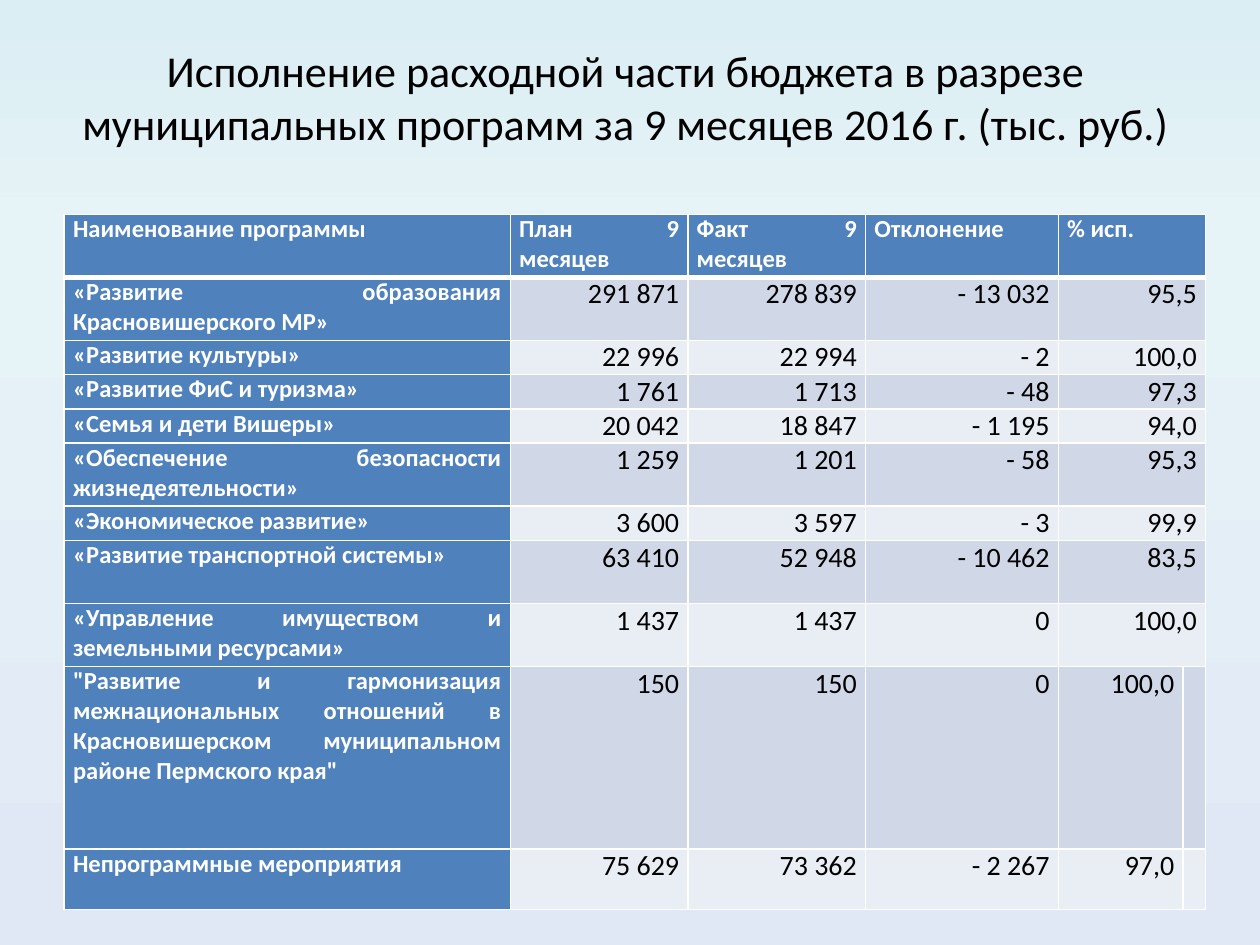
import copy
from dataclasses import dataclass

import pptx
import pptx.dml.color
import pptx.enum.text
import pptx.oxml
import pptx.oxml.ns
import pptx.util

PAGE_WIDTH, PAGE_HEIGHT = 10, 7.5
FONT = "Calibri"
WHITE, BLACK, BLUE = "FFFFFF", "000000", "4F81BD"
BANDS = ("D0D8E8", "E9EDF4")
BACKGROUND = ((0, "DBEEF4"), (0.25, "E6F3F7"), (1, "E1E8F5"))
ALIGN = pptx.enum.text.PP_ALIGN
TITLE = ("Исполнение расходной части бюджета в разрезе муниципальных "
         "программ за 9 месяцев 2016 г. (тыс. руб.)")


@dataclass
class Style:
    size: float
    color: str
    bold: bool
    align: ALIGN


@dataclass
class Program:
    name: str
    plan: str
    fact: str
    deviation: str
    percent: str
    height: float = 0.25
    split: bool = False  # the narrow last column stays separate


TITLE_STYLE = Style(25.2, BLACK, False, ALIGN.CENTER)
LABEL = Style(14, WHITE, True, ALIGN.JUSTIFY)
NUMBER = Style(16, BLACK, False, ALIGN.RIGHT)

COLUMNS = (3.54, 1.41, 1.41, 1.53, 0.99, 0.1)
ROWS = (
    Program("Наименование программы", "План 9 месяцев", "Факт 9 месяцев",
            "Отклонение", "% исп.", 0.5),
    Program("«Развитие образования Красновишерского МР»",
            "291 871", "278 839", "- 13 032", "95,5", 0.5),
    Program("«Развитие культуры»", "22 996", "22 994", "- 2", "100,0"),
    Program("«Развитие ФиС и туризма»", "1 761", "1 713", "- 48", "97,3"),
    Program("«Семья и дети Вишеры»", "20 042", "18 847", "- 1 195", "94,0"),
    Program("«Обеспечение безопасности жизнедеятельности»",
            "1 259", "1 201", "- 58", "95,3", 0.5),
    Program("«Экономическое развитие»", "3 600", "3 597", "- 3", "99,9"),
    Program("«Развитие транспортной системы»",
            "63 410", "52 948", "- 10 462", "83,5", 0.5),
    Program("«Управление имуществом и земельными ресурсами»",
            "1 437", "1 437", "0", "100,0", 0.5),
    Program('"Развитие и гармонизация межнациональных отношений в '
            'Красновишерском муниципальном районе Пермского края"',
            "150", "150", "0", "100,0", 1.45, True),
    Program("Непрограммные мероприятия",
            "75 629", "73 362", "- 2 267", "97,0", 0.48, True),
)


def color(value: str) -> pptx.dml.color.RGBColor:
    return pptx.dml.color.RGBColor.from_string(value)


def across(share: float) -> int:
    return pptx.util.Inches(PAGE_WIDTH * share)


def down(share: float) -> int:
    return pptx.util.Inches(PAGE_HEIGHT * share)


def write(frame, text: str, style: Style) -> None:
    para = frame.paragraphs[0]
    para.alignment = style.align
    span = para.add_run()
    span.text = text
    span.font.name = FONT
    span.font.size = pptx.util.Pt(style.size)
    span.font.bold = style.bold
    span.font.color.rgb = color(style.color)


def paint_background(page) -> None:
    fill = page.background.fill
    fill.gradient()
    fill.gradient_angle = 270
    stop_list = next(page.element.iter(pptx.oxml.ns.qn("a:gsLst")))
    stop_list.append(copy.deepcopy(stop_list[-1]))
    for stop, (position, value) in zip(fill.gradient_stops, BACKGROUND):
        stop.position = position
        stop.color.rgb = color(value)


def draw_borders(cell, top: float, bottom: float) -> None:
    properties = cell._tc.get_or_add_tcPr()
    sides = (("L", 1), ("R", 1), ("T", top), ("B", bottom))
    for index, (side, points) in enumerate(sides):
        line = pptx.oxml.parse_xml(
            f'<a:ln{side} {pptx.oxml.ns.nsdecls("a")} w="{pptx.util.Pt(points)}">'
            f'<a:solidFill><a:srgbClr val="{WHITE}"/></a:solidFill></a:ln{side}>')
        properties.insert(index, line)


def format_cell(cell, row: int, column: int) -> None:
    cell.margin_left = cell.margin_right = pptx.util.Inches(0.07)
    cell.margin_top = cell.margin_bottom = 0
    cell.fill.solid()
    is_label = row == 0 or column == 0
    cell.fill.fore_color.rgb = color(BLUE if is_label else BANDS[(row - 1) % 2])
    draw_borders(cell, top=3 if row == 1 else 1, bottom=3 if row == 0 else 1)


def draw_table(page) -> None:
    box = page.shapes.add_table(
        len(ROWS), len(COLUMNS), across(0.051), down(0.2267),
        pptx.util.Inches(sum(COLUMNS)),
        pptx.util.Inches(sum(program.height for program in ROWS)))
    table = box.table
    for column, width in zip(table.columns, COLUMNS):
        column.width = pptx.util.Inches(width)
    for row, program in enumerate(ROWS):
        table.rows[row].height = pptx.util.Inches(program.height)
        for column in range(len(COLUMNS)):
            format_cell(table.cell(row, column), row, column)
        if not program.split:
            table.cell(row, 4).merge(table.cell(row, 5))
        values = (program.name, program.plan, program.fact,
                  program.deviation, program.percent)
        for column, text in enumerate(values):
            style = LABEL if row == 0 or column == 0 else NUMBER
            write(table.cell(row, column).text_frame, text, style)


def draw_title(page) -> None:
    box = page.shapes.title
    box.left, box.top = across(0.028), down(0.04)
    box.width, box.height = across(0.937), down(0.124)
    frame = box.text_frame
    frame.word_wrap = True
    frame.auto_size = pptx.enum.text.MSO_AUTO_SIZE.NONE
    frame.vertical_anchor = pptx.enum.text.MSO_ANCHOR.MIDDLE
    write(frame, TITLE, TITLE_STYLE)


def main() -> None:
    deck = pptx.Presentation()
    deck.slide_width, deck.slide_height = across(1), down(1)
    page = deck.slides.add_slide(deck.slide_layouts[5])  # title only
    paint_background(page)
    draw_title(page)
    draw_table(page)
    deck.save("out.pptx")


if __name__ == "__main__":
    main()
